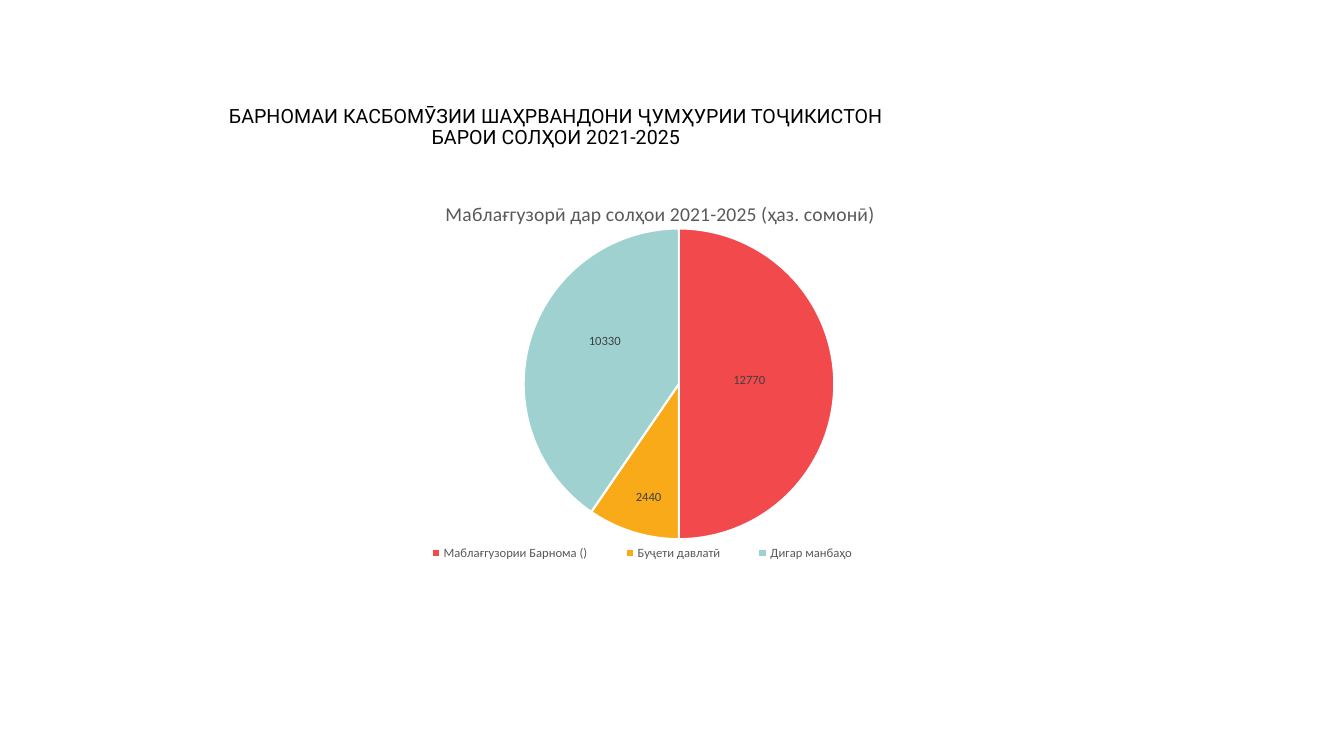
from lxml import etree
from pptx import Presentation
from pptx.chart.data import CategoryChartData
from pptx.dml.color import RGBColor
from pptx.enum.chart import XL_CHART_TYPE, XL_LABEL_POSITION, XL_LEGEND_POSITION
from pptx.enum.text import MSO_ANCHOR, PP_ALIGN
from pptx.oxml.ns import qn
from pptx.util import Cm, Pt

PIE = XL_CHART_TYPE.PIE
LABEL_CENTER = XL_LABEL_POSITION.CENTER
LEGEND_BOTTOM = XL_LEGEND_POSITION.BOTTOM
ANCHOR_BOTTOM = MSO_ANCHOR.BOTTOM
CENTER = PP_ALIGN.CENTER

BLACK = RGBColor(0x00, 0x00, 0x00)
WHITE = RGBColor(0xFF, 0xFF, 0xFF)
GREY = RGBColor(0x59, 0x59, 0x59)
DARK_GREY = RGBColor(0x40, 0x40, 0x40)
RED = RGBColor(0xF2, 0x49, 0x4C)
AMBER = RGBColor(0xF9, 0xAA, 0x19)
TEAL = RGBColor(0x9F, 0xD1, 0xD0)

HEADING = ["БАРНОМАИ КАСБОМӮЗИИ ШАҲРВАНДОНИ ҶУМҲУРИИ ТОҶИКИСТОН",
           "БАРОИ СОЛҲОИ 2021-2025"]
FUNDING_TITLE = "Маблағгузорӣ дар солҳои 2021-2025 (ҳаз. сомонӣ)"
# Source, amount, slice colour, label shift as a share of the chart
FUNDING = [
    ("Маблағгузории Барнома ()", 12770, RED, (-0.01, -0.01)),
    ("Буҷети давлатӣ", 2440, AMBER, (-0.01, 0.1)),
    ("Дигар манбаҳо", 10330, TEAL, (0, -0.05)),
]


def style_font(font, name, size, color):
    font.name, font.size, font.bold = name, Pt(size), False
    font.color.rgb = color


def place(element, index, **settings):
    """Give a chart part a manual layout, as its child at the index."""
    for old in element.findall(qn("c:layout")):
        element.remove(old)
    layout = etree.Element(qn("c:layout"))
    manual = etree.SubElement(layout, qn("c:manualLayout"))
    for tag, value in settings.items():
        etree.SubElement(manual, qn(f"c:{tag}")).set("val", str(value))
    element.insert(index, layout)


class FundingSlide:
    heading_font = "Roboto"
    chart_font = "Calibri"

    def __init__(self, presentation):
        self.slide = presentation.slides.add_slide(presentation.slide_layouts[6])

    def heading(self, lines, left, top, width, height):
        frame = self.slide.shapes.add_textbox(
            Cm(left), Cm(top), Cm(width), Cm(height)).text_frame
        frame.word_wrap = True
        frame.vertical_anchor = ANCHOR_BOTTOM
        paragraph = frame.paragraphs[0]
        paragraph.alignment = CENTER
        paragraph.line_spacing = 0.9
        for number, line in enumerate(lines):
            if number:
                paragraph.add_line_break()
            run = paragraph.add_run()
            run.text = line
            style_font(run.font, self.heading_font, 14, BLACK)

    def pie(self, title, shares, left, top, width, height):
        data = CategoryChartData()
        data.categories = [source for source, *_ in shares]
        data.add_series("Series 1", [amount for _, amount, *_ in shares])
        chart = self.slide.shapes.add_chart(
            PIE, Cm(left), Cm(top), Cm(width), Cm(height), data).chart
        style_font(chart.font, self.chart_font, 10, BLACK)

        # Chart title
        run = chart.chart_title.text_frame.paragraphs[0].add_run()
        run.text = title
        style_font(run.font, self.chart_font, 14, GREY)
        chart.chart_title.include_in_layout = False
        place(chart.chart_title._element, 1,
              xMode="edge", yMode="edge", x=0.19, y=0.04)

        # Legend
        chart.has_legend = True
        chart.legend.position = LEGEND_BOTTOM
        chart.legend.include_in_layout = False
        style_font(chart.legend.font, self.chart_font, 9, GREY)
        place(chart.legend._element, 1, xMode="edge", yMode="edge",
              x=0.13, y=0.91, w=0.66, h=0.07)

        # Slices and their amounts
        plot = chart.plots[0]
        plot.vary_by_categories = True
        place(plot._element.getparent(), 0, layoutTarget="inner",
              xMode="edge", yMode="edge", x=0.28, y=0.12, w=0.46, h=0.79)
        for number, (_, _, color, (shift_x, shift_y)) in enumerate(shares):
            point = plot.series[0].points[number]
            point.format.fill.solid()
            point.format.fill.fore_color.rgb = color
            point.format.line.color.rgb = WHITE
            point.format.line.width = Pt(1.5)
            label = point.data_label
            style_font(label.font, self.chart_font, 9, DARK_GREY)
            label.position = LABEL_CENTER
            place(label._get_or_add_dLbl(), 1, x=shift_x, y=shift_y)


def main():
    presentation = Presentation()
    presentation.slide_width, presentation.slide_height = Cm(33.87), Cm(19.05)
    slide = FundingSlide(presentation)
    slide.heading(HEADING, 2.49, 0.2, 23.04, 3.68)
    slide.pie(FUNDING_TITLE, FUNDING, 7.59, 4.57, 18.67, 9.91)
    presentation.save("out.pptx")


if __name__ == "__main__":
    main()
